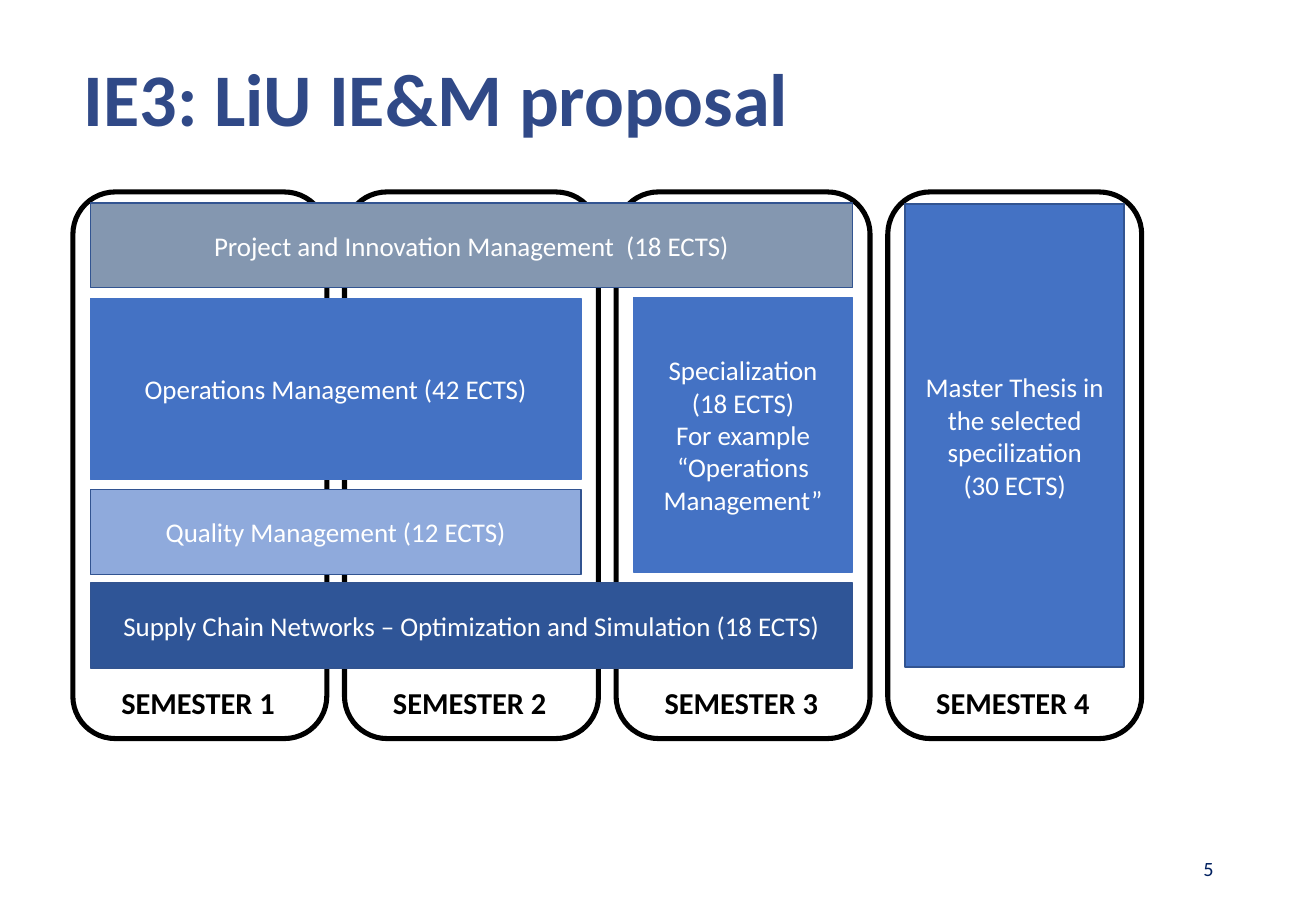
from pptx import Presentation
from pptx.dml.color import RGBColor
from pptx.enum import shapes, text
from pptx.util import Pt

TITLE = "IE3: LiU IE&M proposal"
PAGE = "5"
FONT = "Calibri"
BLUE, EDGE = "4472C4", "325491"

# Semester frames: left of the first, top, width, height, step, in points
LEFT, TOP, WIDE, HIGH, STEP = 43.2, 113.8, 150.5, 324, 161
SEMESTERS = ["SEMESTER 1", "SEMESTER 2", "SEMESTER 3", "SEMESTER 4"]

# Course blocks: first and last semester, top, height, fill, line, paragraphs
INSET = 10.4
COURSES = [
    (1, 3, 120.5, 50, "8497B0", EDGE,
     ["Project and Innovation Management  (18 ECTS)"]),
    (1, 2, 177, 107.3, BLUE, BLUE, ["Operations Management (42 ECTS)"]),
    (1, 2, 290.2, 50.4, "8FAADC", EDGE, ["Quality Management (12 ECTS)"]),
    (1, 3, 345.6, 50.4, "2F5597", EDGE,
     ["Supply Chain Networks – Optimization and Simulation (18 ECTS)"]),
    (3, 3, 176.4, 162.7, BLUE, BLUE,
     ["Specialization", "(18 ECTS)", "For example",
      "“Operations Management”"]),
    (4, 4, 121, 274.5, BLUE, EDGE,
     ["Master Thesis in the selected specilization", "(30 ECTS)"]),
]


def rgb(code):
    return RGBColor.from_string(code)


def write(shape, lines, size, color, align, bold=False, wrap=True):
    frame = shape.text_frame
    frame.word_wrap = wrap
    frame.vertical_anchor = text.MSO_ANCHOR.MIDDLE
    frame.text = "\n".join(lines)
    for para in frame.paragraphs:
        para.alignment = align
        font = para.font
        font.name, font.size, font.bold = FONT, Pt(size), bold
        font.color.rgb = rgb(color)


def draw(kind, box, fill, line, width):
    shape = slide.shapes.add_shape(kind, *map(Pt, box))
    shape.shadow.inherit = False
    if fill:
        shape.fill.solid()
        shape.fill.fore_color.rgb = rgb(fill)
    else:
        shape.fill.background()
    shape.line.color.rgb = rgb(line)
    shape.line.width = Pt(width)
    return shape


def start(term):
    return LEFT + (term - 1) * STEP


deck = Presentation()
deck.slide_width, deck.slide_height = Pt(780), Pt(540)
slide = deck.slides.add_slide(deck.slide_layouts[5])
align = text.PP_ALIGN

# Title
title = slide.shapes.title
title.left, title.top, title.width, title.height = map(Pt, (42.5, 23, 672.5, 75))
write(title, [TITLE], 44, "304987", align.LEFT, bold=True)
title.text_frame.paragraphs[0].line_spacing = 0.9

# Page number
page = slide.shapes.add_textbox(*map(Pt, (550.8, 500.4, 175.7, 28.8)))
write(page, [PAGE], 12, "002060", align.RIGHT)

# Semester frames and labels
for term, name in enumerate(SEMESTERS, 1):
    x = start(term)
    draw(shapes.MSO_SHAPE.ROUNDED_RECTANGLE, (x, TOP, WIDE, HIGH),
         None, "000000", 3)
    label = slide.shapes.add_textbox(*map(Pt, (x + 21.6, 402, 106.6, 28.8)))
    write(label, [name], 18, "000000", align.LEFT, bold=True, wrap=False)

# Course blocks
for first, last, top, high, fill, line, lines in COURSES:
    x = start(first) + INSET
    wide = start(last) + WIDE - INSET - x
    block = draw(shapes.MSO_SHAPE.RECTANGLE, (x, top, wide, high),
                 fill, line, 1)
    write(block, lines, 16, "FFFFFF", align.CENTER)

deck.save("out.pptx")
